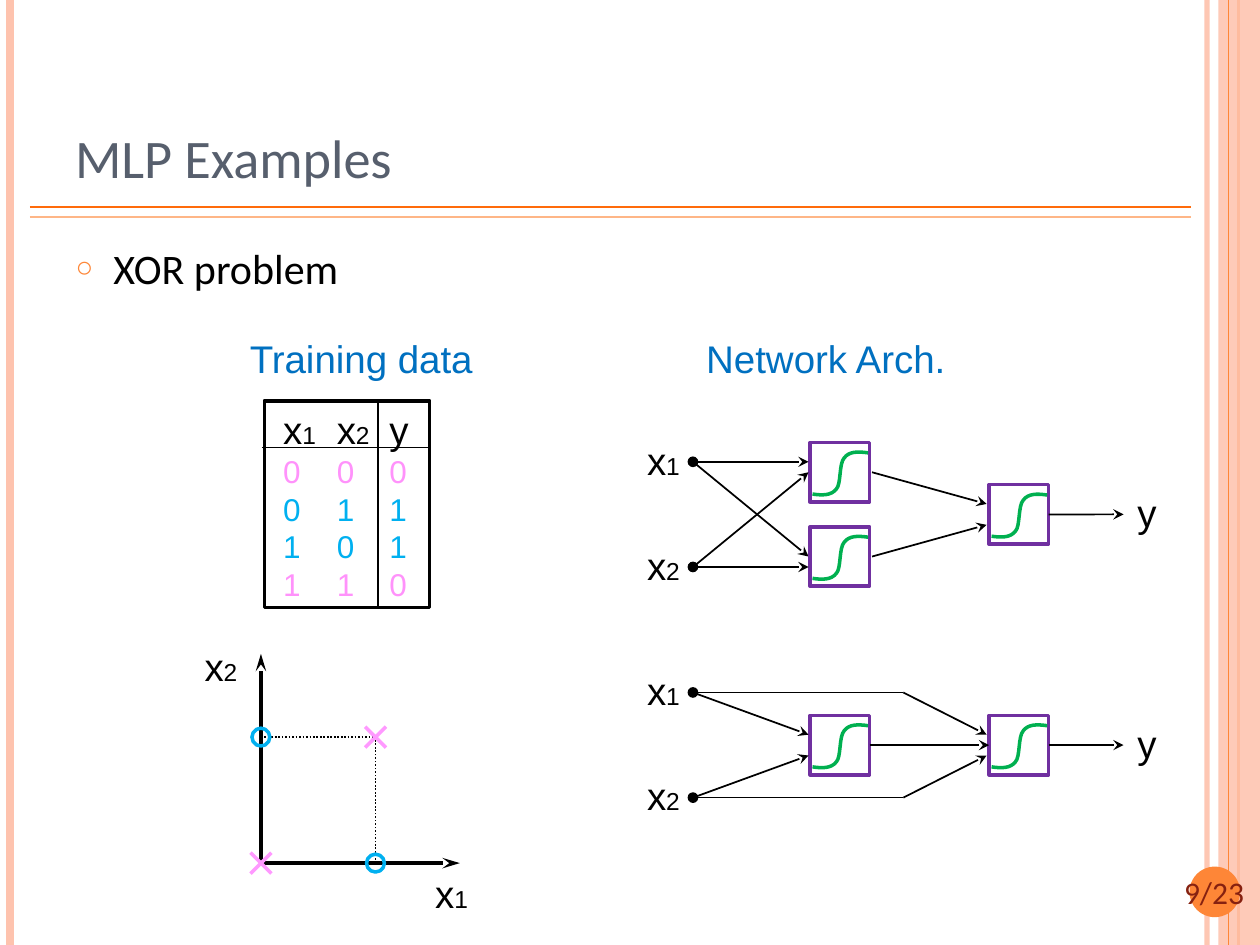
import dataclasses
import itertools
import typing

import lxml.etree
import pptx
import pptx.dml.color
import pptx.enum.dml
import pptx.enum.shapes
import pptx.enum.text
import pptx.oxml.ns
import pptx.util

Cm = pptx.util.Cm
Pt = pptx.util.Pt
qn = pptx.oxml.ns.qn
Align = pptx.enum.text.PP_ALIGN
Anchor = pptx.enum.text.MSO_ANCHOR
Shape = pptx.enum.shapes.MSO_SHAPE


@dataclasses.dataclass(frozen=True)
class Theme:
    ink: str = "000000"
    title: str = "575F6D"
    heading: str = "0070C0"
    accent: str = "FE8637"
    rule: str = "FF6B0A"
    soft_rule: str = "FEB687"
    band: str = "FEC3AE"
    page_number: str = "862110"
    zero: str = "FF92FB"
    one: str = "00B0F0"
    cross: str = "FF99FF"
    unit: str = "7030A0"
    sigmoid: str = "00B050"
    title_size: float = 31
    body_size: float = 24
    label_size: float = 22
    data_size: float = 18
    subscript_size: float = 14
    title_font: str = "Calibri"
    label_font: str = "Arial"


class Point(typing.NamedTuple):
    x: float
    y: float


class Stroke(typing.NamedTuple):
    start: Point
    end: Point
    color: str
    width: float
    opacity: int = 100


class Mark(typing.NamedTuple):
    center: Point
    is_one: bool


THEME = Theme()
UNIT_SIZE = 1.2
INPUT_X, HIDDEN_X, OUTPUT_X = 13.97, 16.33, 19.94
INPUT_GAP, HIDDEN_GAP, PORT_GAP = 1.06, 0.85, 0.21
SIGMOID = [Point(0, 0.86), Point(0.2, 0.89), Point(0.38, 0.89), Point(0.48, 0.76), Point(0.58, 0.66),
           Point(0.53, 0.25), Point(0.64, 0.13), Point(0.74, 0), Point(0.91, 0), Point(1.12, 0.03)]
EDGE_LINES = [
    Stroke(Point(24.33, 0), Point(24.33, 19.05), THEME.band, 3, 93),
    Stroke(Point(0.2, 0), Point(0.2, 19.05), THEME.band, 4.5),
    Stroke(Point(24.97, 0), Point(24.97, 19.05), THEME.accent, 1.5),
]
TOP_LINES = [
    Stroke(Point(24.77, 0), Point(24.77, 19.05), THEME.accent, 0.75),
    Stroke(Point(0.6, 4.17), Point(24, 4.17), THEME.rule, 1),
    Stroke(Point(0.6, 4.37), Point(24, 4.37), THEME.soft_rule, 1),
]


def rgb(color: str):
    return pptx.dml.color.RGBColor.from_string(color)


def set_opacity(shape, percent: int) -> None:
    for color in shape.element.spPr.iter(qn("a:srgbClr")):
        lxml.etree.SubElement(color, qn("a:alpha"), val=str(percent * 1000))


def style_font(para, size: float, color: str, font: str) -> None:
    para.font.size = Pt(size)
    para.font.name = font
    para.font.color.rgb = rgb(color)


def write(para, words: str, subscript: str = "") -> None:
    para.add_run().text = words
    if subscript:
        span = para.add_run()
        span.text = subscript
        span.font.size = Pt(THEME.subscript_size)


def add_text(page, corner: Point, width: float, height: float, align):
    box = page.shapes.add_textbox(Cm(corner.x), Cm(corner.y), Cm(width), Cm(height))
    box.text_frame.word_wrap = False
    para = box.text_frame.paragraphs[0]
    para.alignment = align
    return box, para


def add_label(page, corner: Point, words: str, subscript: str = "") -> None:
    box, para = add_text(page, corner, 1.19 if subscript else 0.92, 0.88, Align.CENTER)
    para.line_spacing = 0.65
    style_font(para, THEME.label_size, THEME.ink, THEME.label_font)
    write(para, words, subscript)


def add_heading(page, corner: Point, width: float, words: str) -> None:
    box, para = add_text(page, corner, width, 1.19, Align.RIGHT)
    style_font(para, THEME.label_size, THEME.heading, THEME.label_font)
    write(para, words)


def add_line(shapes, stroke: Stroke, arrow: str = "", dotted: bool = False):
    line = shapes.add_connector(pptx.enum.shapes.MSO_CONNECTOR.STRAIGHT,
                                *(Cm(value) for value in stroke.start + stroke.end))
    line.line.color.rgb = rgb(stroke.color)
    line.line.width = Pt(stroke.width)
    if dotted:
        line.line.dash_style = pptx.enum.dml.MSO_LINE.ROUND_DOT
    properties = line.element.spPr
    if arrow:
        lxml.etree.SubElement(properties.find(qn("a:ln")), qn("a:tailEnd"), type="stealth", len=arrow)
    lxml.etree.SubElement(properties, qn("a:effectLst"))
    if stroke.opacity < 100:
        set_opacity(line, stroke.opacity)
    return line


def add_wire(page, start: Point, end: Point, arrow: str = "med"):
    return add_line(page.shapes, Stroke(start, end, THEME.ink, 1), arrow)


def add_outline(page, kind, corner: Point, width: float, height: float,
                fill: str = "", line: str = "", weight: float = 2):
    shape = page.shapes.add_shape(kind, Cm(corner.x), Cm(corner.y), Cm(width), Cm(height))
    shape.shadow.inherit = False
    if fill:
        shape.fill.solid()
        shape.fill.fore_color.rgb = rgb(fill)
    else:
        shape.fill.background()
    if line:
        shape.line.color.rgb = rgb(line)
        shape.line.width = Pt(weight)
    else:
        shape.line.fill.background()
    return shape


def add_circle(page, center: Point, size: float, **look):
    corner = Point(center.x - size / 2, center.y - size / 2)
    return add_outline(page, Shape.OVAL, corner, size, size, **look)


def add_sigmoid(page, corner: Point) -> None:
    start, *knots = [(Cm(corner.x + point.x), Cm(corner.y + point.y)) for point in SIGMOID[::3]]
    builder = page.shapes.build_freeform(*start, scale=1.0)
    builder.add_line_segments(knots, close=False)
    curve = builder.convert_to_shape()
    top = SIGMOID[-1].y
    for index, segment in enumerate(list(curve.element.iter(qn("a:lnTo")))):
        bezier = lxml.etree.Element(qn("a:cubicBezTo"))
        for point in SIGMOID[3 * index + 1:3 * index + 4]:
            lxml.etree.SubElement(bezier, qn("a:pt"), x=str(Cm(point.x)), y=str(Cm(point.y - top)))
        segment.getparent().replace(segment, bezier)
    curve.shadow.inherit = False
    curve.fill.background()
    curve.line.color.rgb = rgb(THEME.sigmoid)
    curve.line.width = Pt(2)


def add_unit(page, left: float, middle: float):
    corner = Point(left, middle - UNIT_SIZE / 2)
    unit = add_outline(page, Shape.RECTANGLE, corner, UNIT_SIZE, UNIT_SIZE, line=THEME.unit)
    add_sigmoid(page, Point(corner.x + 0.05, corner.y + 0.18))
    return unit


def add_network(page, middle: float, hidden_count: int) -> None:
    output = add_unit(page, OUTPUT_X, middle)
    result = add_wire(page, Point(OUTPUT_X + UNIT_SIZE, middle), Point(22.65, middle))
    result.begin_connect(output, 3)
    add_label(page, Point(22.66, middle - 0.34), "y")
    hidden_port, output_port = HIDDEN_X - 0.03, OUTPUT_X - 0.05
    if hidden_count == 1:
        hidden = add_unit(page, HIDDEN_X, middle)
        link = add_wire(page, Point(HIDDEN_X + UNIT_SIZE, middle), Point(OUTPUT_X, middle))
        link.begin_connect(hidden, 3)
        link.end_connect(output, 1)
    for side, subscript in ((-1, "1"), (1, "2")):
        source = Point(INPUT_X, middle + side * INPUT_GAP)
        port = middle + side * PORT_GAP
        add_label(page, Point(12.78, source.y - 0.34), "x", subscript)
        add_circle(page, source, 0.18, fill=THEME.ink, line=THEME.ink, weight=1)
        if hidden_count == 1:
            bend = Point(18.21, source.y)
            add_wire(page, source, Point(hidden_port, port))
            add_wire(page, source, bend, arrow="")
            add_wire(page, bend, Point(output_port, port))
        else:
            level = middle + side * HIDDEN_GAP
            add_unit(page, HIDDEN_X, level)
            add_wire(page, source, Point(hidden_port, source.y))
            add_wire(page, source, Point(hidden_port, middle - side * HIDDEN_GAP))
            add_wire(page, Point(HIDDEN_X + UNIT_SIZE + 0.05, level), Point(output_port, port))


def add_tabs(para, stops: tuple) -> None:
    tabs = lxml.etree.SubElement(para._p.get_or_add_pPr(), qn("a:tabLst"))
    for stop in stops:
        lxml.etree.SubElement(tabs, qn("a:tab"), pos=str(Cm(stop)), algn="l")


def add_truth_table(page) -> None:
    box = add_outline(page, Shape.RECTANGLE, Point(5.33, 8.08), 3.33, 4.17, line=THEME.ink)
    frame = box.text_frame
    frame.word_wrap = True
    frame.vertical_anchor = Anchor.MIDDLE
    frame.margin_left, frame.margin_right = Cm(0.38), 0
    cases = [(a, b, a ^ b) for a, b in itertools.product((0, 1), repeat=2)]
    for case in [None, *cases]:
        para = frame.add_paragraph() if case else frame.paragraphs[0]
        para.alignment = Align.LEFT
        add_tabs(para, (1.08, 2.14))
        if case:
            style_font(para, THEME.data_size, THEME.one if case[2] else THEME.zero, THEME.label_font)
            write(para, "\t".join(str(value) for value in case))
        else:
            style_font(para, THEME.label_size, THEME.ink, THEME.label_font)
            for words, subscript in (("x", "1"), ("\tx", "2"), ("\ty", "")):
                write(para, words, subscript)
    add_wire(page, Point(5.28, 9.02), Point(8.69, 9.02), arrow="")
    add_wire(page, Point(7.62, 8.05), Point(7.62, 12.27), arrow="")


def add_plot(page) -> None:
    origin, corner = Point(5.26, 17.4), Point(7.57, 14.86)
    on_x, on_y = Point(corner.x, origin.y), Point(origin.x, corner.y)
    for start in (on_x, on_y):
        add_line(page.shapes, Stroke(start, corner, THEME.ink, 1), dotted=True)
    for tip in (Point(9.27, origin.y), Point(origin.x, 13.18)):
        add_line(page.shapes, Stroke(origin, tip, THEME.ink, 2), arrow="lg")
    add_label(page, Point(8.51, 17.71), "x", "1")
    add_label(page, Point(3.86, 13.13), "x", "2")
    for center, is_one in (Mark(corner, False), Mark(origin, False), Mark(on_x, True), Mark(on_y, True)):
        if is_one:
            add_circle(page, center, 0.36, line=THEME.one)
            continue
        group = page.shapes.add_group_shape()
        for slope in (-1, 1):
            add_line(group.shapes, Stroke(Point(center.x - 0.21, center.y - slope * 0.21),
                                          Point(center.x + 0.21, center.y + slope * 0.21), THEME.cross, 2))


def add_decoration(page) -> None:
    for stroke in EDGE_LINES:
        add_line(page.shapes, stroke)
    band = add_outline(page, Shape.RECTANGLE, Point(24.56, 0), 0.84, 19.05, fill=THEME.band)
    set_opacity(band, 87)
    for stroke in TOP_LINES:
        add_line(page.shapes, stroke)
    add_circle(page, Point(24.49, 17.98), 1.02, fill=THEME.accent)
    box, para = add_text(page, Point(23.32, 17.47), 2.31, 1.02, Align.CENTER)
    box.text_frame.vertical_anchor = Anchor.MIDDLE
    style_font(para, THEME.data_size, THEME.page_number, THEME.title_font)
    write(para, "9/23")


def place(holder, corner: Point, width: float, height: float, anchor):
    holder.left, holder.top = Cm(corner.x), Cm(corner.y)
    holder.width, holder.height = Cm(width), Cm(height)
    holder.text_frame.vertical_anchor = anchor
    para = holder.text_frame.paragraphs[0]
    para.alignment = Align.LEFT
    return para


def fill_placeholders(page) -> None:
    para = place(page.shapes.title, Point(1.26, 0.76), 21.95, 3.18, Anchor.BOTTOM)
    style_font(para, THEME.title_size, THEME.title, THEME.title_font)
    write(para, "MLP Examples")
    para = place(page.placeholders[1], Point(1.27, 4.76), 20.75, 13.23, Anchor.TOP)
    para.space_before = Pt(0)
    properties = para._p.get_or_add_pPr()
    properties.set("marL", str(Cm(0.76)))
    properties.set("indent", str(Cm(-0.76)))
    color = lxml.etree.SubElement(properties, qn("a:buClr"))
    lxml.etree.SubElement(color, qn("a:srgbClr"), val=THEME.accent)
    lxml.etree.SubElement(properties, qn("a:buSzPct"), val="70000")
    lxml.etree.SubElement(properties, qn("a:buChar"), char="○")
    style_font(para, THEME.body_size, THEME.ink, THEME.title_font)
    write(para, "XOR problem")


def main() -> None:
    deck = pptx.Presentation()
    deck.slide_width, deck.slide_height = Cm(25.4), Cm(19.05)
    page = deck.slides.add_slide(deck.slide_layouts[1])
    add_decoration(page)
    fill_placeholders(page)
    add_heading(page, Point(4.7, 6.63), 5.08, "Training data")
    add_heading(page, Point(13.9, 6.63), 5.41, "Network Arch.")
    add_truth_table(page)
    add_network(page, 10.37, hidden_count=2)
    add_network(page, 15.02, hidden_count=1)
    add_plot(page)
    deck.save("out.pptx")


if __name__ == "__main__":
    main()
